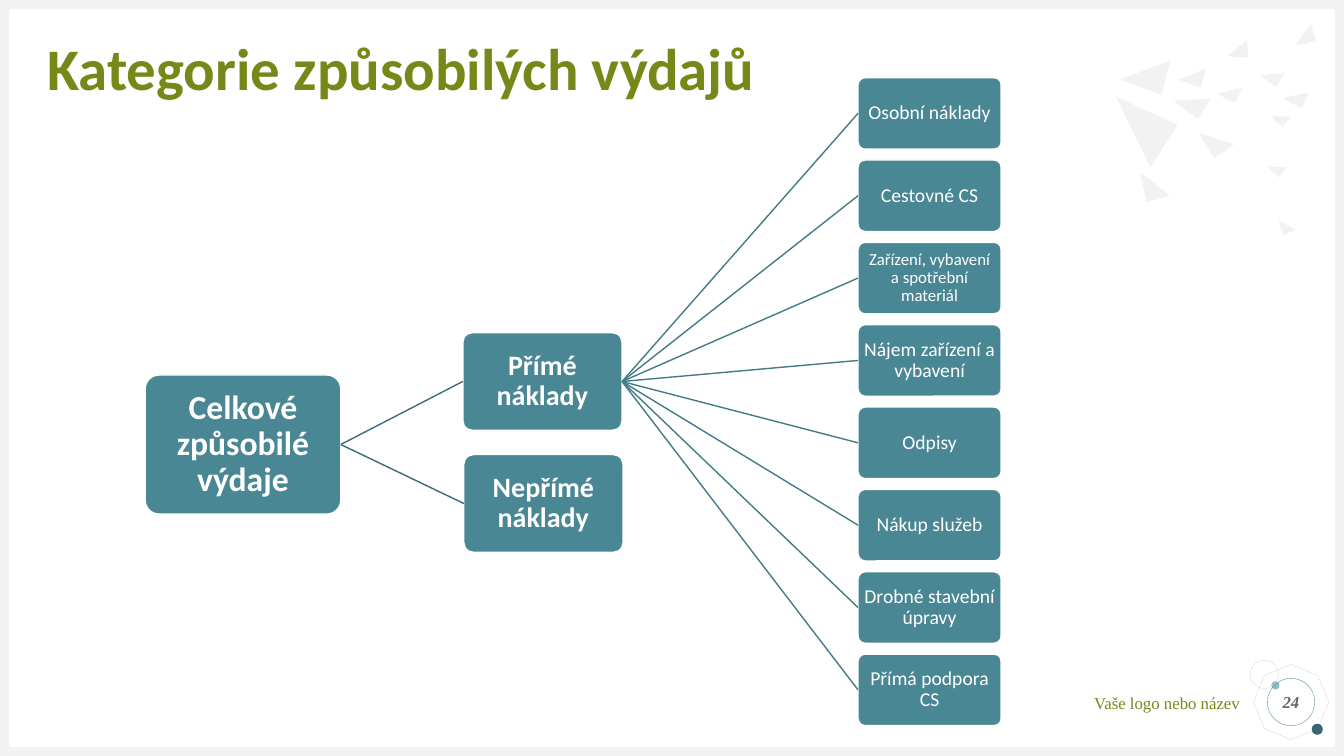
"""Build the slide on categories of eligible costs as a left-to-right tree."""
from lxml.etree import SubElement
from pptx import Presentation
from pptx.dml.color import RGBColor
from pptx.enum.shapes import MSO_CONNECTOR, MSO_SHAPE
from pptx.enum.text import MSO_ANCHOR, MSO_AUTO_SIZE, PP_ALIGN
from pptx.oxml.ns import qn
from pptx.util import Inches, Pt

COLORS = {
    "title": "758918", "box": "4A8795", "white": "FFFFFF", "grey": "F2F2F2",
    "ring": "D9D9D9", "number": "666666", "pale": "8CBBC6", "dark": "376570",
    "branch": "3B6C77", "twig": "437B87",
}
W, H, EDGE = 13.33, 7.5, 0.09


def paint(sp, fill=None, line=None, width=0.25):
    """Set fill and line by colour name, or switch them off."""
    sp.shadow.inherit = False
    if fill:
        sp.fill.solid()
        sp.fill.fore_color.rgb = RGBColor.from_string(COLORS[fill])
    else:
        sp.fill.background()
    if line:
        sp.line.color.rgb = RGBColor.from_string(COLORS[line])
        sp.line.width = Pt(width)
    else:
        sp.line.fill.background()


def write(sp, text, color, font, align=PP_ALIGN.CENTER, spacing=0.9, inset=0):
    """Put one formatted paragraph into a shape."""
    tf = sp.text_frame
    frame = {"word_wrap": True, "auto_size": MSO_AUTO_SIZE.NONE,
             "vertical_anchor": MSO_ANCHOR.MIDDLE}
    frame.update({f"margin_{side}": Inches(inset)
                  for side in ("left", "top", "right", "bottom")})
    for name, value in frame.items():
        setattr(tf, name, value)
    p = tf.paragraphs[0]
    p.alignment, p.line_spacing = align, spacing
    r = p.add_run()
    r.text = text
    for name, value in font.items():
        setattr(r.font, name, value)
    r.font.color.rgb = RGBColor.from_string(COLORS[color])


prs = Presentation()
prs.slide_width, prs.slide_height = Inches(W), Inches(H)
s = prs.slides.add_slide(prs.slide_layouts[5])
shapes = s.shapes

ornaments = [
    (MSO_SHAPE.OCTAGON, 12.46, 6.62, 0.69, 0.69, None, "ring"),
    (MSO_SHAPE.OVAL, 12.61, 6.76, 0.08, 0.08, "pale", None),
    (MSO_SHAPE.OVAL, 13.01, 7.18, 0.11, 0.11, "dark", None),
    (MSO_SHAPE.OVAL, 12.4, 6.55, 0.28, 0.28, None, "ring"),
    (MSO_SHAPE.RECTANGLE, 0, H - EDGE, W, EDGE, "grey", None),
    (MSO_SHAPE.RECTANGLE, 0, 0, W, EDGE, "grey", None),
    (MSO_SHAPE.RECTANGLE, 0, 0, EDGE, H, "grey", None),
    (MSO_SHAPE.RECTANGLE, W - EDGE, 0, EDGE, H, "grey", None),
]
for kind, x, y, w, h, fill, line in ornaments:
    sp = shapes.add_shape(kind, Inches(x), Inches(y), Inches(w), Inches(h))
    paint(sp, fill, line)
    if kind == MSO_SHAPE.OCTAGON:
        sp.rotation = 22.7

shards = [
    [(11.61, 0.6), (11.52, 0.94), (11.11, 0.79)],
    [(12.01, 0.98), (11.88, 1.18), (11.64, 1)],
    [(11.96, 0.68), (11.91, 0.87), (11.69, 0.79)],
    [(12.32, 0.87), (12.25, 1.02), (12.07, 0.93)],
    [(12.37, 0.4), (12.38, 0.57), (12.24, 0.57), (12.18, 0.55)],
    [(12.8, 1.16), (12.72, 1.26), (12.64, 1.19), (12.61, 1.15)],
    [(13, 0.24), (13.05, 0.4), (12.92, 0.44), (12.85, 0.44)],
    [(12.74, 0.72), (12.66, 0.86), (12.49, 0.75)],
    [(12.98, 0.92), (12.91, 1.07), (12.78, 1.01), (12.73, 0.97)],
    [(11.68, 1.24), (11.41, 1.66), (11.07, 0.96)],
    [(12.24, 1.43), (12.04, 1.57), (11.89, 1.32)],
    [(12.76, 1.66), (12.69, 1.76), (12.6, 1.69), (12.58, 1.65)],
    [(11.6, 1.94), (11.37, 2.01), (11.31, 1.71)],
    [(12.85, 2.28), (12.73, 2.33), (12.69, 2.23), (12.69, 2.19)],
]
for shard in shards:
    points = [(Inches(x), Inches(y)) for x, y in shard]
    outline = shapes.build_freeform(*points[0])
    outline.add_line_segments(points[1:], close=True)
    paint(outline.convert_to_shape(), "grey")

title = shapes.title
title.left, title.top, title.width, title.height = map(Inches, (0.47, 0.47, 12.4, 0.47))
write(title, "Kategorie způsobilých výdajů", "title",
      {"name": "Calibri", "size": Pt(42), "bold": True}, PP_ALIGN.LEFT)

footer = shapes.add_textbox(Inches(9.55), Inches(6.87), Inches(2.75), Inches(0.2))
write(footer, "Vaše logo nebo název", "title",
      {"name": "Times New Roman", "size": Pt(12)}, PP_ALIGN.RIGHT, 1)

number = shapes.add_shape(MSO_SHAPE.OVAL, Inches(12.57), Inches(6.73), Inches(0.47), Inches(0.47))
paint(number, None, "box")
write(number, "24", "number", {"name": "Times New Roman", "size": Pt(12),
                               "bold": True, "italic": True}, spacing=1)

LEAF_TOP, LEAF_STEP = 0.77, 0.817
leaves = ["Osobní náklady", "Cestovné CS", "Zařízení, vybavení a spotřební materiál",
          "Nájem zařízení a vybavení", "Odpisy", "Nákup služeb",
          "Drobné stavební úpravy", "Přímá podpora CS"]
total, direct, indirect = "Celkové způsobilé výdaje", "Přímé náklady", "Nepřímé náklady"
tree = [
    (total, None, 1.44, 3.72, 1.94, 1.38, 24),
    (direct, total, 4.59, 3.3, 1.58, 0.97, 20),
    (indirect, total, 4.6, 4.51, 1.58, 0.97, 20),
]
tree += [(leaf, direct, 8.51, LEAF_TOP + i * LEAF_STEP, 1.42, 0.71, 12 if len(leaf) > 30 else 14)
         for i, leaf in enumerate(leaves)]
boxes = {}
for text, parent, x, y, w, h, size in tree:
    sp = shapes.add_shape(MSO_SHAPE.ROUNDED_RECTANGLE, Inches(x), Inches(y), Inches(w), Inches(h))
    sp.adjustments[0] = 0.1
    paint(sp, "box", "white", 1)
    write(sp, text, "white", {"name": "Calibri", "size": Pt(size), "bold": size >= 20},
          inset=0.06 if parent is None else 0.03)
    boxes[text] = sp
    if parent:
        link = shapes.add_connector(MSO_CONNECTOR.STRAIGHT, 0, 0, 0, 0)
        link.begin_connect(boxes[parent], 3)
        link.end_connect(sp, 1)
        link.line.width = Pt(1)
        link.line.color.rgb = RGBColor.from_string(COLORS["branch" if parent == total else "twig"])
        SubElement(link._element.spPr, qn("a:effectLst"))

prs.save("out.pptx")
